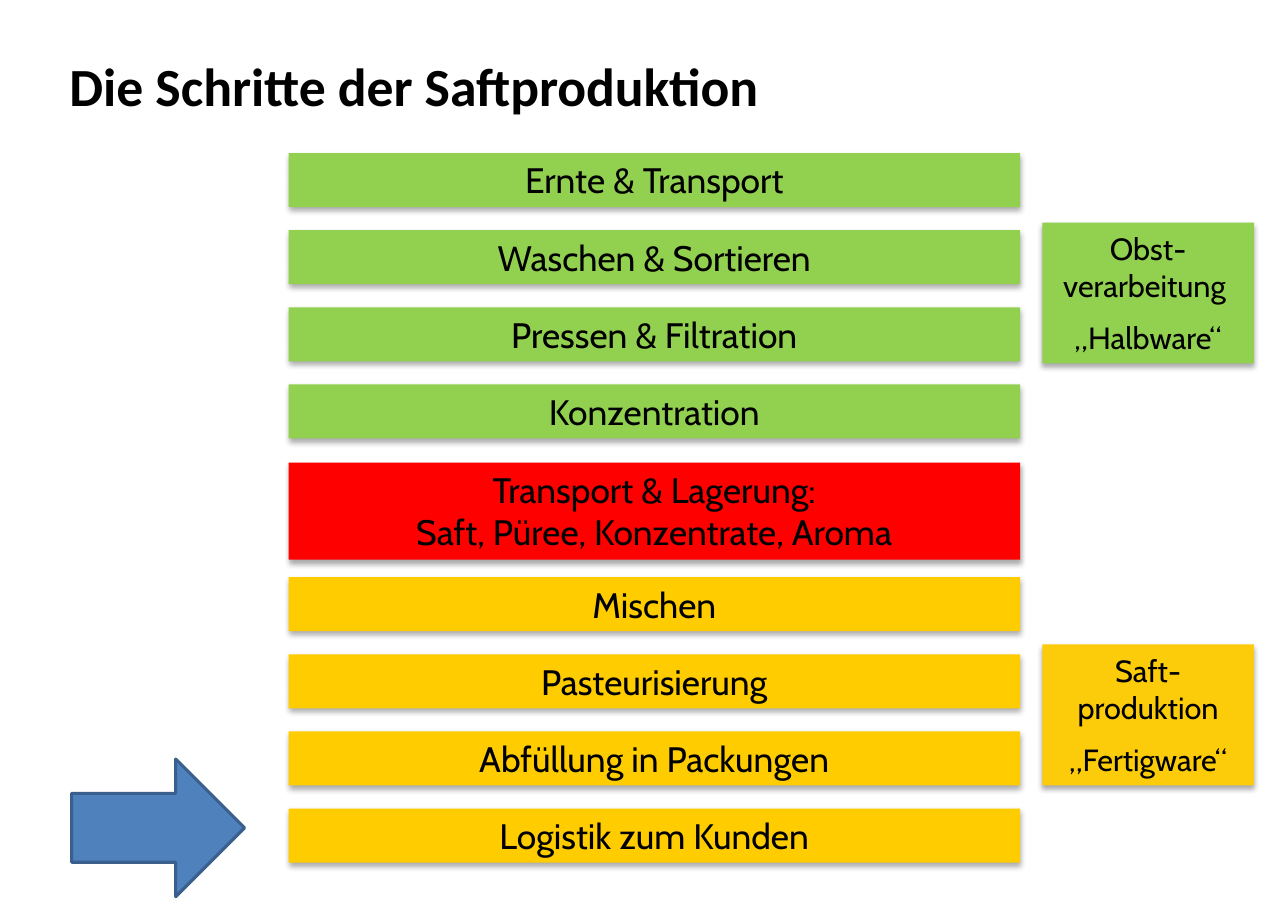
import pptx
import pptx.util
import pptx.dml.color
import pptx.enum.shapes
import pptx.enum.text
import pptx.oxml
from pptx.util import Inches

RGBColor = pptx.dml.color.RGBColor
MSO_SHAPE = pptx.enum.shapes.MSO_SHAPE
MSO_ANCHOR = pptx.enum.text.MSO_ANCHOR
PP_ALIGN = pptx.enum.text.PP_ALIGN

BLACK = RGBColor(0x00, 0x00, 0x00)
GREEN = RGBColor(0x92, 0xD0, 0x50)
RED = RGBColor(0xFF, 0x00, 0x00)
YELLOW = RGBColor(0xFF, 0xCC, 0x00)
GOLD = RGBColor(0xFC, 0xCC, 0x0A)
BLUE = RGBColor(0x4F, 0x81, 0xBD)
DARK_BLUE = RGBColor(0x3A, 0x5F, 0x8C)

TITLE = "Die Schritte der Saftproduktion"
STEP_GROUPS = [
    (1.39, 0.49, GREEN, ["Ernte & Transport", "Waschen & Sortieren",
                         "Pressen & Filtration", "Konzentration"]),
    (4.2, 0.88, RED, ["Transport & Lagerung:\vSaft, Püree, Konzentrate, Aroma"]),
    (5.24, 0.49, YELLOW, ["Mischen", "Pasteurisierung",
                          "Abfüllung in Packungen", "Logistik zum Kunden"]),
]
STAGES = [
    (2.02, GREEN, ["Obst-verarbeitung ", "„Halbware“"]),
    (5.85, GOLD, ["Saft-produktion", "„Fertigware“"]),
]
STEP_LEFT, STEP_WIDTH, STEP_PITCH = 2.62, 6.64, 0.7
STAGE_LEFT, STAGE_WIDTH, STAGE_HEIGHT = 9.46, 1.92, 1.28

SHADOW = (
    '<a:effectLst xmlns:a="http://schemas.openxmlformats.org/drawingml/2006/main">'
    '<a:outerShdw blurRad="44450" dist="27940" dir="5400000" algn="ctr" rotWithShape="0">'
    '<a:srgbClr val="000000"><a:alpha val="32000"/></a:srgbClr>'
    '</a:outerShdw></a:effectLst>'
)


def add_box(s, left, top, width, height, color, lines, size, anchor):
    sp = s.shapes.add_shape(MSO_SHAPE.RECTANGLE, Inches(left), Inches(top),
                            Inches(width), Inches(height))
    sp.fill.solid()
    sp.fill.fore_color.rgb = color
    sp.line.fill.background()
    sp._element.spPr.append(pptx.oxml.parse_xml(SHADOW))
    tf = sp.text_frame
    tf.word_wrap = True
    tf.vertical_anchor = anchor
    tf.text = "\n".join(lines)
    for i, p in enumerate(tf.paragraphs):
        p.alignment = PP_ALIGN.CENTER
        if i:
            p.space_before = pptx.util.Pt(size / 2)
        for r in p.runs:
            r.font.name = "Cabin"
            r.font.size = pptx.util.Pt(size)
            r.font.color.rgb = BLACK


def add_title(s):
    sp = s.shapes.title
    sp.left, sp.top = Inches(0.49), Inches(0.43)
    sp.width, sp.height = Inches(8.78), Inches(0.68)
    tf = sp.text_frame
    tf.text = TITLE
    tf.auto_size = pptx.enum.text.MSO_AUTO_SIZE.NONE
    tf.vertical_anchor = MSO_ANCHOR.MIDDLE
    tf.margin_left = tf.margin_right = Inches(0.14)
    tf.margin_top = tf.margin_bottom = Inches(0.07)
    p = tf.paragraphs[0]
    p.alignment = PP_ALIGN.LEFT
    r = p.runs[0]
    r.font.name = "Calibri"
    r.font.size = pptx.util.Pt(35.1)
    r.font.bold = True
    r.font.color.rgb = BLACK


def add_arrow(s):
    sp = s.shapes.add_shape(MSO_SHAPE.RIGHT_ARROW, Inches(0.65), Inches(6.89),
                            Inches(1.57), Inches(1.25))
    sp.shadow.inherit = False
    sp.fill.solid()
    sp.fill.fore_color.rgb = BLUE
    sp.line.color.rgb = DARK_BLUE
    sp.line.width = pptx.util.Pt(2)


def main():
    prs = pptx.Presentation()
    prs.slide_width, prs.slide_height = Inches(11.69), Inches(8.27)
    s = prs.slides.add_slide(prs.slide_layouts[5])
    add_title(s)
    for top, height, color, steps in STEP_GROUPS:
        for i, step in enumerate(steps):
            add_box(s, STEP_LEFT, top + i * STEP_PITCH, STEP_WIDTH, height,
                    color, [step], 23.1, MSO_ANCHOR.TOP)
    for top, color, lines in STAGES:
        add_box(s, STAGE_LEFT, top, STAGE_WIDTH, STAGE_HEIGHT,
                color, lines, 20, MSO_ANCHOR.MIDDLE)
    add_arrow(s)
    prs.save("out.pptx")


if __name__ == "__main__":
    main()
